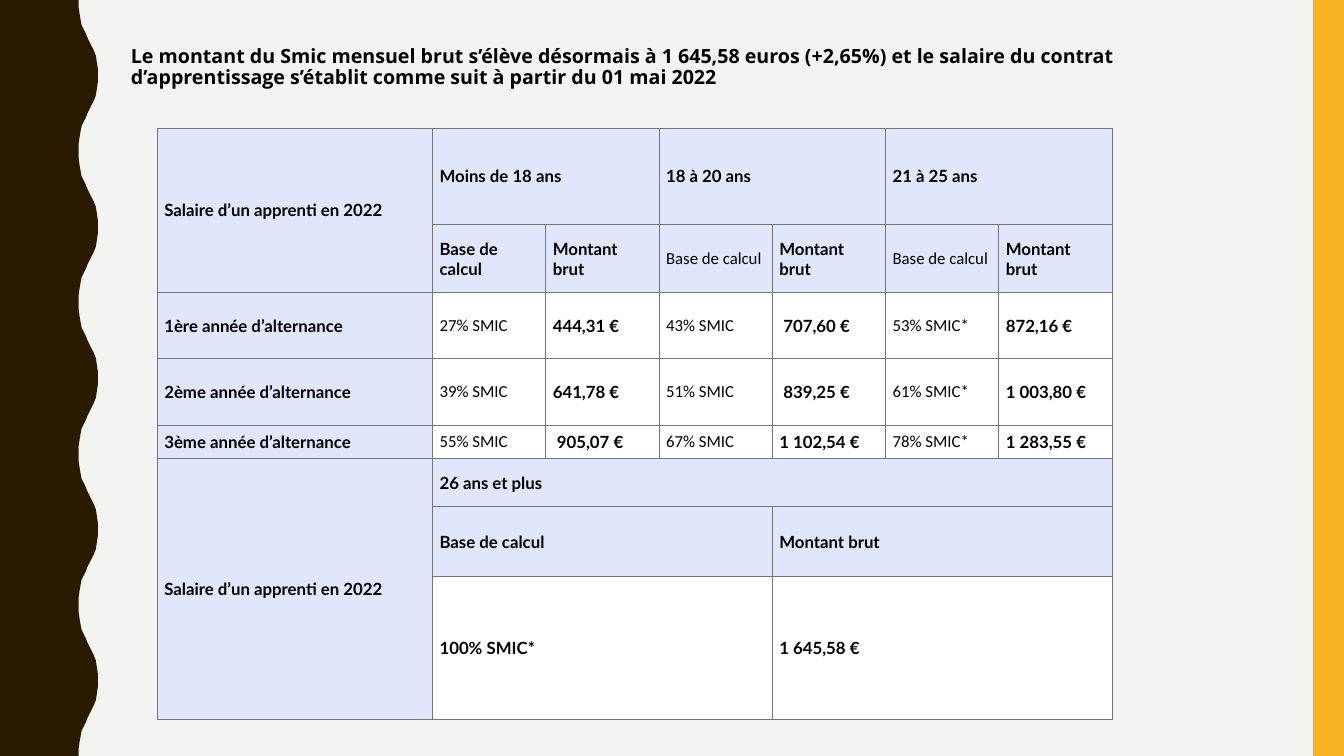
from lxml import etree
from pptx import Presentation
from pptx.dml.color import RGBColor
from pptx.enum.shapes import MSO_SHAPE
from pptx.enum.text import MSO_ANCHOR
from pptx.oxml.ns import qn
from pptx.util import Inches, Pt

RECTANGLE = MSO_SHAPE.RECTANGLE
MIDDLE = MSO_ANCHOR.MIDDLE

BACKGROUND = RGBColor(0xF3, 0xF3, 0xF2)
BROWN = RGBColor(0x2A, 0x1A, 0x00)
AMBER = RGBColor(0xF8, 0xB3, 0x23)
LAVENDER = RGBColor(0xE0, 0xE7, 0xFC)
WHITE = RGBColor(0xFF, 0xFF, 0xFF)
BLACK = RGBColor(0x00, 0x00, 0x00)
GREY = RGBColor(0x75, 0x75, 0x75)

TITLE = (
    "Le montant du Smic mensuel brut s’élève désormais à 1 645,58 euros (+2,65%) "
    "et le salaire du contrat d’apprentissage s’établit comme suit à partir du 01 mai 2022"
)
SALARY = "Salaire d’un apprenti en 2022"
BASIS = "Base de calcul"
AMOUNT = "Montant brut"

SALARY_ROWS = [
    [SALARY, "Moins de 18 ans", "", "18 à 20 ans", "", "21 à 25 ans", ""],
    [""] + [BASIS, AMOUNT] * 3,
    ["1ère année d’alternance", "27% SMIC", "444,31 €", "43% SMIC", " 707,60 €",
     "53% SMIC*", "872,16 €"],
    ["2ème année d’alternance", "39% SMIC", "641,78 €", "51% SMIC", " 839,25 €",
     "61% SMIC*", "1 003,80 €"],
    ["3ème année d’alternance", "55% SMIC", " 905,07 €", "67% SMIC", "1 102,54 €",
     "78% SMIC*", "1 283,55 €"],
    [SALARY, "26 ans et plus", "", "", "", "", ""],
    ["", BASIS, "", "", AMOUNT, "", ""],
    ["", "100% SMIC*", "", "", "1 645,58 €", "", ""],
]
ROW_HEIGHTS = [0.96, 0.67, 0.66, 0.66, 0.33, 0.48, 0.69, 1.42]
LABEL_WIDTH = 2.73
MERGES = [
    (0, 0, 1, 0), (0, 1, 0, 2), (0, 3, 0, 4), (0, 5, 0, 6),
    (5, 0, 7, 0), (5, 1, 5, 6),
    (6, 1, 6, 3), (6, 4, 6, 6), (7, 1, 7, 3), (7, 4, 7, 6),
]
YEAR_ROWS = (2, 3, 4)
VALUE_ROWS = YEAR_ROWS + (7,)

WAVE_PERIOD = 1.5
WAVE_RISE = [
    (0.78, 0), (0.78, 0.07), (0.79, 0.14), (0.8, 0.2), (0.81, 0.25),
    (0.83, 0.29), (0.85, 0.33), (0.87, 0.38), (0.89, 0.42), (0.91, 0.46),
    (0.93, 0.5), (0.95, 0.55), (0.96, 0.61), (0.97, 0.68), (0.97, 0.75),
]


def write_text(text_frame, text, font="Lato", size=12, bold=True, line_spacing=None):
    paragraph = text_frame.paragraphs[0]
    paragraph.line_spacing = line_spacing
    run = paragraph.add_run()
    run.text = text
    run.font.name = font
    run.font.size = Pt(size)
    run.font.bold = bold
    run.font.color.rgb = BLACK


def paint(shape, color):
    shape.fill.solid()
    shape.fill.fore_color.rgb = color
    shape.line.fill.background()
    shape.shadow.inherit = False


def add_wavy_band(slide, left, top, height):
    wave = WAVE_RISE + [(x, WAVE_PERIOD - y) for x, y in WAVE_RISE[-2:0:-1]]
    edge = [
        (x, y + period * WAVE_PERIOD)
        for period in range(round(height / WAVE_PERIOD))
        for x, y in wave
    ]
    outline = edge + [(WAVE_RISE[0][0], height), (0, height)]
    builder = slide.shapes.build_freeform(Inches(left), Inches(top))
    builder.add_line_segments(
        [(Inches(left + x), Inches(top + y)) for x, y in outline], close=True
    )
    paint(builder.convert_to_shape(), BROWN)


def add_side_bar(slide, left, top, width, height):
    bar = slide.shapes.add_shape(
        RECTANGLE, Inches(left), Inches(top), Inches(width), Inches(height)
    )
    paint(bar, AMBER)


def add_title(slide, left, top, width, height):
    box = slide.shapes.add_textbox(
        Inches(left), Inches(top), Inches(width), Inches(height)
    )
    box.text_frame.word_wrap = True
    write_text(box.text_frame, TITLE, font="Open Sans", size=14, line_spacing=0.9)


def add_borders(cell):
    properties = cell._tc.get_or_add_tcPr()
    for side in ("a:lnL", "a:lnR", "a:lnT", "a:lnB"):
        line = etree.SubElement(properties, qn(side), w=str(Pt(0.75)))
        fill = etree.SubElement(line, qn("a:solidFill"))
        etree.SubElement(fill, qn("a:srgbClr"), val=str(GREY))


def format_cell(cell, row, column):
    cell.vertical_anchor = MIDDLE
    cell.margin_left = cell.margin_right = Inches(0.07)
    cell.margin_top = cell.margin_bottom = Inches(0.03)
    add_borders(cell)
    cell.fill.solid()
    is_value = row in VALUE_ROWS and column > 0
    cell.fill.fore_color.rgb = WHITE if is_value else LAVENDER


def add_salary_table(slide, left, top, width, height):
    row_count, column_count = len(SALARY_ROWS), len(SALARY_ROWS[0])
    frame = slide.shapes.add_table(
        row_count, column_count,
        Inches(left), Inches(top), Inches(width), Inches(height),
    )
    table = frame.table
    table.first_row = False
    table.horz_banding = False
    for row, row_height in zip(table.rows, ROW_HEIGHTS):
        row.height = Inches(row_height)
    for index, column in enumerate(table.columns):
        value_width = (width - LABEL_WIDTH) / (column_count - 1)
        column.width = Inches(value_width if index else LABEL_WIDTH)

    for row, texts in enumerate(SALARY_ROWS):
        for column, text in enumerate(texts):
            cell = table.cell(row, column)
            format_cell(cell, row, column)
            if text:
                is_light = (row in YEAR_ROWS and column % 2 == 1) or (
                    row == 1 and column in (3, 5)
                )
                write_text(
                    cell.text_frame, text,
                    font="Calibri" if is_light else "Lato", bold=not is_light,
                )
    for first_row, first_column, last_row, last_column in MERGES:
        table.cell(first_row, first_column).merge(table.cell(last_row, last_column))


def main():
    presentation = Presentation()
    presentation.slide_width = Inches(13.33)
    presentation.slide_height = Inches(7.5)
    slide = presentation.slides.add_slide(presentation.slide_layouts[6])
    slide.background.fill.solid()
    slide.background.fill.fore_color.rgb = BACKGROUND
    add_wavy_band(slide, 0, 0, 7.5)
    add_side_bar(slide, 13.02, 0, 0.31, 7.5)
    add_salary_table(slide, 1.56, 1.27, 9.47, 5.87)
    add_title(slide, 1.2, 0.41, 11.43, 0.57)
    presentation.save("out.pptx")


if __name__ == "__main__":
    main()
